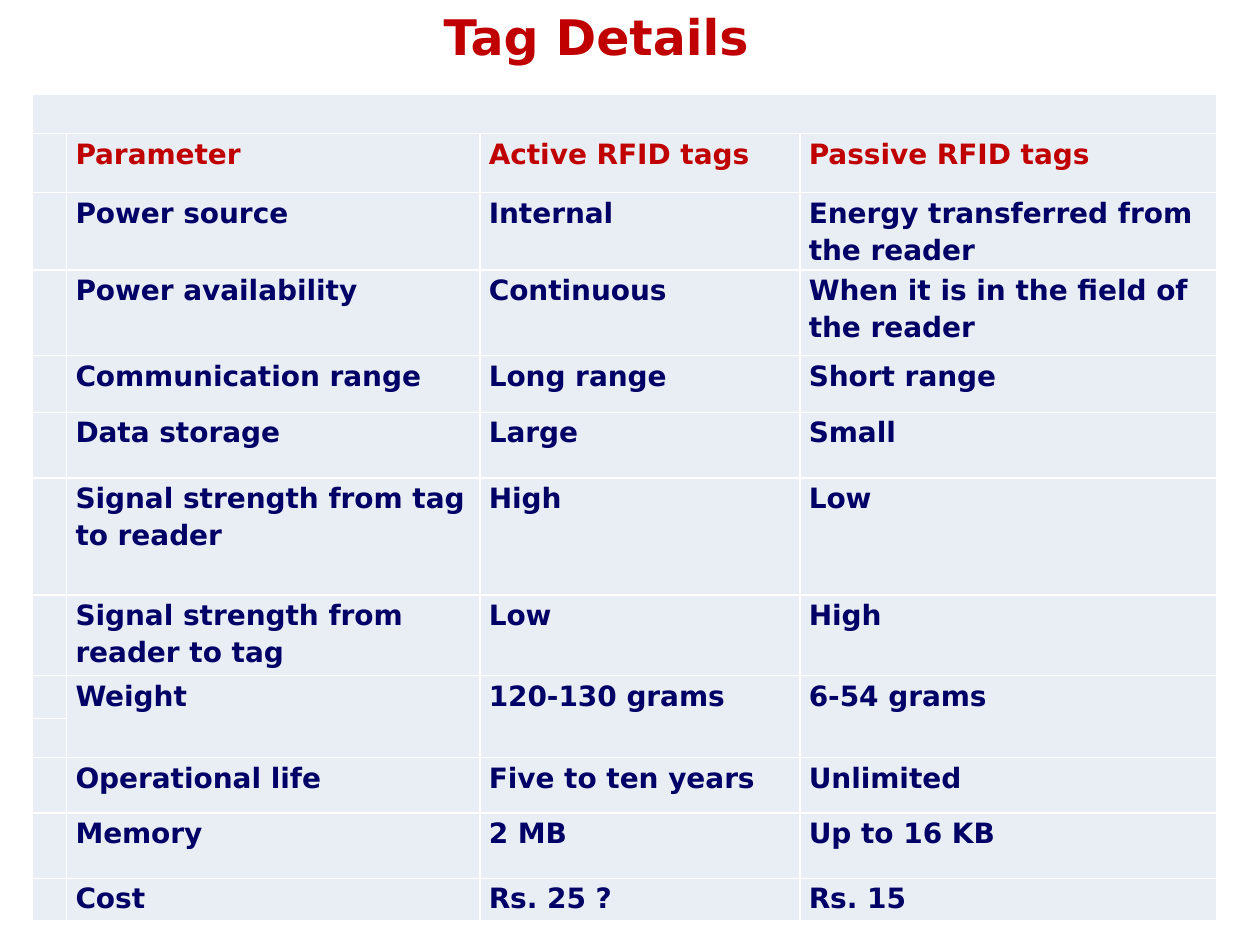
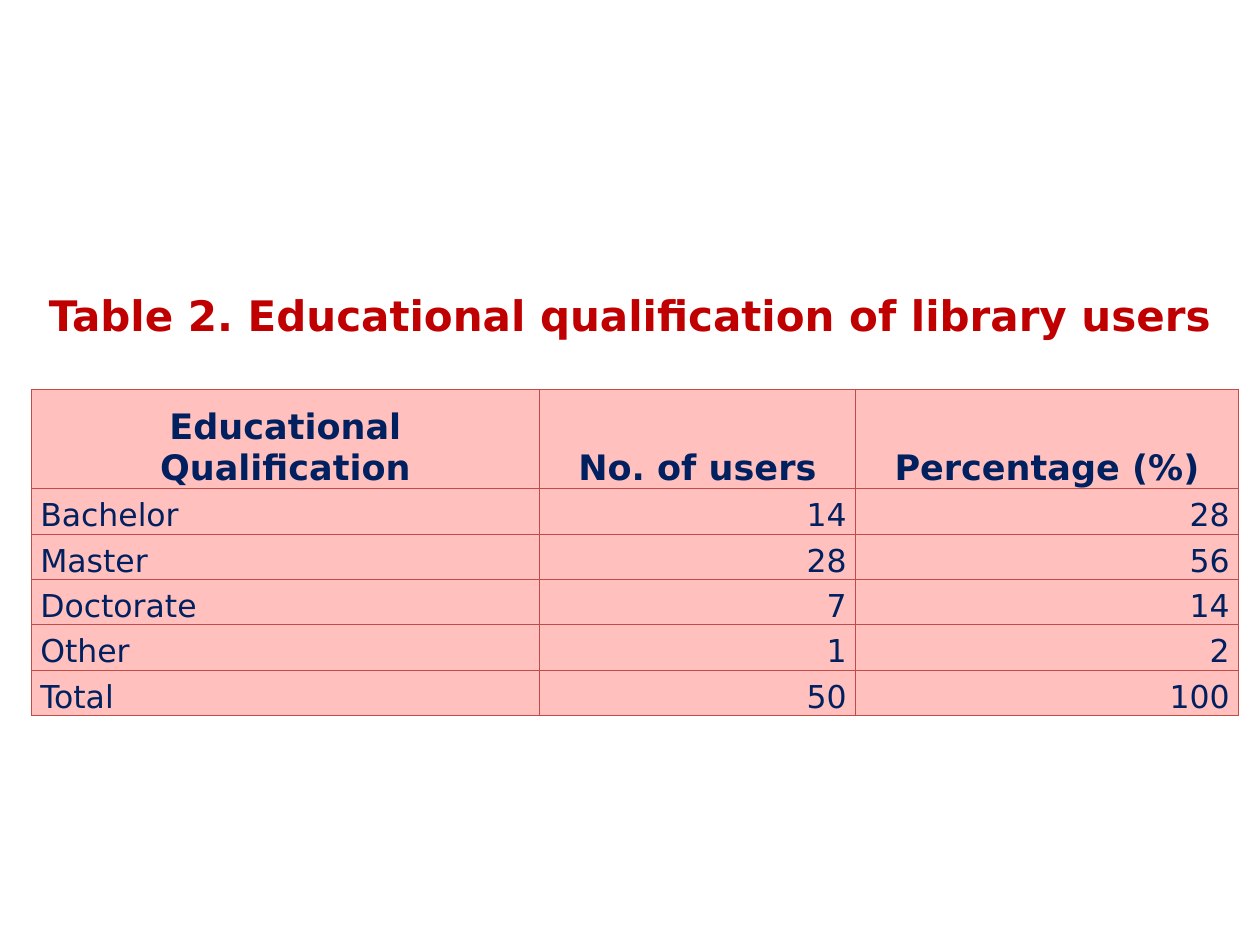
"""Build two table slides on tag details and library users, on a grid of 100 by 75 units."""
import pptx
import pptx.dml.color
import pptx.enum.text
import pptx.oxml
import pptx.oxml.ns
import pptx.util

UNIT = pptx.util.Inches(0.1)
FONT_NAME = "DejaVu Sans"
CRIMSON = pptx.dml.color.RGBColor(0xC0, 0x00, 0x00)
NAVY = pptx.dml.color.RGBColor(0x00, 0x00, 0x66)
DARK_BLUE = pptx.dml.color.RGBColor(0x00, 0x20, 0x60)
PALE_BLUE = pptx.dml.color.RGBColor(0xE9, 0xED, 0xF4)
PINK = pptx.dml.color.RGBColor(0xFF, 0xC0, 0xBE)
BRICK = pptx.dml.color.RGBColor(0xBF, 0x4C, 0x48)
WHITE = pptx.dml.color.RGBColor(0xFF, 0xFF, 0xFF)
LEFT, CENTER, RIGHT = (
    pptx.enum.text.PP_ALIGN.LEFT,
    pptx.enum.text.PP_ALIGN.CENTER,
    pptx.enum.text.PP_ALIGN.RIGHT,
)
TOP, MIDDLE, BOTTOM = (
    pptx.enum.text.MSO_ANCHOR.TOP,
    pptx.enum.text.MSO_ANCHOR.MIDDLE,
    pptx.enum.text.MSO_ANCHOR.BOTTOM,
)

TAG_COLUMNS = [2.7, 32.8, 25.4, 33.1]
TAG_ROWS = [
    (3.1, []),
    (4.7, ["Parameter", "Active RFID tags", "Passive RFID tags"]),
    (6.1, ["Power source", "Internal", "Energy transferred from the reader"]),
    (6.8, ["Power availability", "Continuous", "When it is in the field of the reader"]),
    (4.5, ["Communication range", "Long range", "Short range"]),
    (5.2, ["Data storage", "Large", "Small"]),
    (9.3, ["Signal strength from tag to reader", "High", "Low"]),
    (6.4, ["Signal strength from reader to tag", "Low", "High"]),
    (3.4, ["Weight", "120-130 grams", "6-54 grams"]),
    (3.1, []),
    (4.4, ["Operational life", "Five to ten years", "Unlimited"]),
    (5.2, ["Memory", "2 MB", "Up to 16 KB"]),
    (3.4, ["Cost", "Rs. 25 ?", "Rs. 15"]),
]
TAG_HEADER_ROW = 1
WEIGHT_ROW = 8

USER_COLUMNS = [40.3, 25.1, 30.4]
USER_ROWS = [
    (7.9, ["Educational Qualification", "No. of users", "Percentage (%)"]),
    (3.6, ["Bachelor", "14", "28"]),
    (3.6, ["Master", "28", "56"]),
    (3.6, ["Doctorate", "7", "14"]),
    (3.6, ["Other", "1", "2"]),
    (3.6, ["Total", "50", "100"]),
]


def grid(units):
    """Turn grid units into a length."""
    return round(units * UNIT)


def set_attributes(target, values):
    """Set every attribute in values on target."""
    for name, value in values.items():
        setattr(target, name, value)


def write_paragraph(paragraph, text, size, color, bold, **paragraph_format):
    """Write one formatted run into a paragraph."""
    set_attributes(paragraph, paragraph_format)
    run = paragraph.add_run()
    run.text = text
    set_attributes(run.font, {"name": FONT_NAME, "size": pptx.util.Pt(size), "bold": bold})
    run.font.color.rgb = color


def add_titled_slide(presentation, text, position, size, alignment, anchor, wrap):
    """Add a slide whose title placeholder is moved to position."""
    slide = presentation.slides.add_slide(presentation.slide_layouts[5])
    title = slide.shapes.title
    set_attributes(title, dict(zip(("left", "top", "width", "height"), map(grid, position))))
    set_attributes(title.text_frame, {
        "word_wrap": wrap,
        "vertical_anchor": anchor,
        "auto_size": pptx.enum.text.MSO_AUTO_SIZE.SHAPE_TO_FIT_TEXT,
    })
    write_paragraph(title.text_frame.paragraphs[0], text, size, CRIMSON, True,
                    alignment=alignment)
    return slide


def format_cell(cell, fill, border_color, border_width, anchor):
    """Set the margins, borders and fill of a cell."""
    margin = grid(0.7)
    set_attributes(cell, {
        "margin_left": margin, "margin_right": margin,
        "margin_top": 0, "margin_bottom": 0, "vertical_anchor": anchor,
    })
    properties = cell._tc.get_or_add_tcPr()
    for side in ("lnL", "lnR", "lnT", "lnB"):
        properties.append(pptx.oxml.parse_xml(
            f'<a:{side} {pptx.oxml.ns.nsdecls("a")} w="{pptx.util.Pt(border_width)}">'
            f'<a:solidFill><a:srgbClr val="{border_color}"/></a:solidFill></a:{side}>'))
    cell.fill.solid()
    cell.fill.fore_color.rgb = fill


def add_grid_table(slide, left, top, columns, rows, **cell_format):
    """Add a table with formatted, empty cells."""
    heights = [height for height, _ in rows]
    frame = slide.shapes.add_table(
        len(rows), len(columns), grid(left), grid(top), grid(sum(columns)), grid(sum(heights)))
    table = frame.table
    set_attributes(table, {"first_row": False, "horz_banding": False})
    for column, width in zip(table.columns, columns):
        column.width = grid(width)
    for row, height in zip(table.rows, heights):
        row.height = grid(height)
    for cell in table.iter_cells():
        format_cell(cell, **cell_format)
    return table


def add_tag_slide(presentation):
    """Compare active and passive tags."""
    slide = add_titled_slide(presentation, "Tag Details", (34.2, 0, 26.8, 5.7),
                             28, LEFT, TOP, False)
    table = add_grid_table(slide, 2.6, 7.5, TAG_COLUMNS, TAG_ROWS, fill=PALE_BLUE,
                           border_color=WHITE, border_width=1, anchor=TOP)
    table.cell(0, 0).merge(table.cell(0, len(TAG_COLUMNS) - 1))
    for column in range(1, len(TAG_COLUMNS)):
        table.cell(WEIGHT_ROW, column).merge(table.cell(WEIGHT_ROW + 1, column))
    for row, (_, texts) in enumerate(TAG_ROWS):
        color = CRIMSON if row == TAG_HEADER_ROW else NAVY
        for column, text in enumerate(texts, start=1):
            write_paragraph(table.cell(row, column).text_frame.paragraphs[0], text,
                            16, color, True, line_spacing=1.15)


def add_user_slide(presentation):
    """Show the qualifications of library users."""
    slide = add_titled_slide(presentation, "Table 2. Educational qualification of library users",
                             (2.5, 22.5, 95, 5), 24, CENTER, MIDDLE, True)
    table = add_grid_table(slide, 2.5, 30.9, USER_COLUMNS, USER_ROWS, fill=PINK,
                           border_color=BRICK, border_width=0.75, anchor=BOTTOM)
    for row, (_, texts) in enumerate(USER_ROWS):
        is_header = row == 0
        for column, text in enumerate(texts):
            body_alignment = RIGHT if column else LEFT
            write_paragraph(table.cell(row, column).text_frame.paragraphs[0], text,
                            20 if is_header else 18, DARK_BLUE, is_header,
                            alignment=CENTER if is_header else body_alignment)


def main():
    """Build and save the presentation."""
    presentation = pptx.Presentation()
    set_attributes(presentation, {"slide_width": grid(100), "slide_height": grid(75)})
    add_tag_slide(presentation)
    add_user_slide(presentation)
    presentation.save("out.pptx")


if __name__ == "__main__":
    main()
